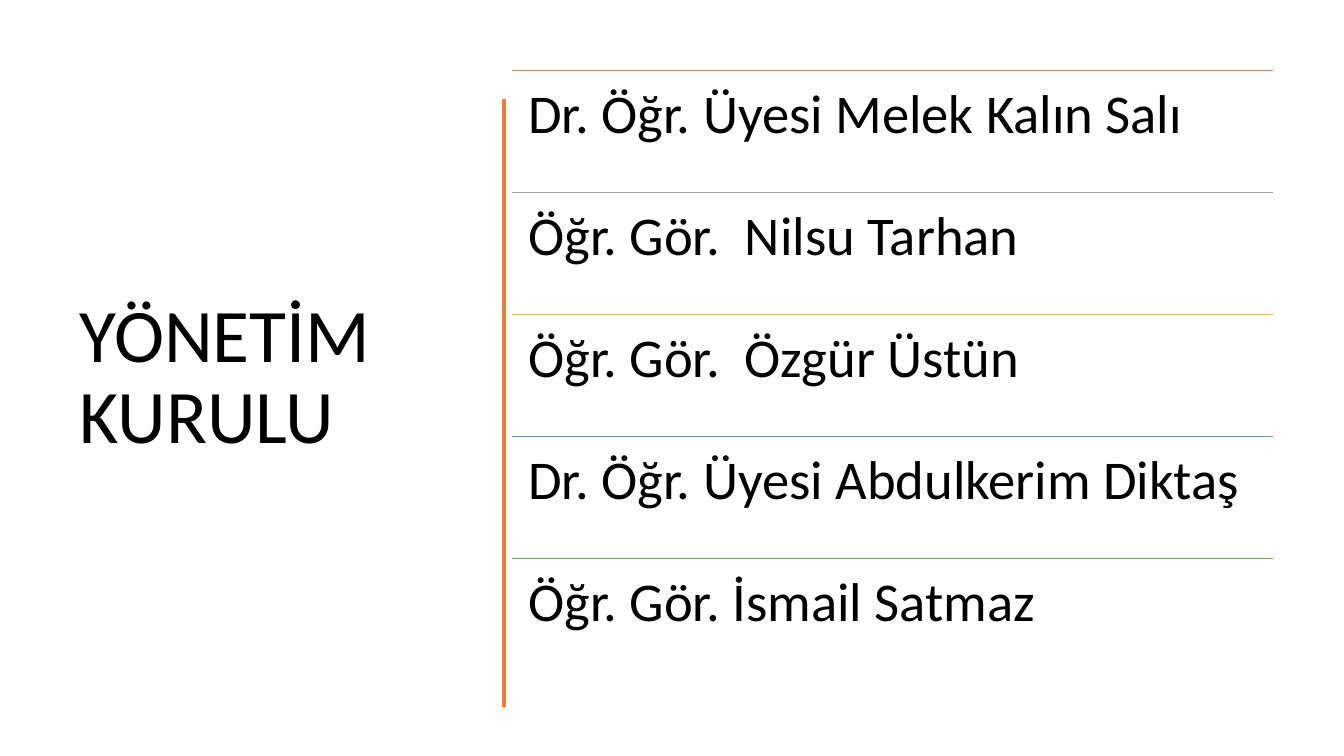
from dataclasses import dataclass

from pptx import Presentation
from pptx import util as u
from pptx.dml.color import RGBColor
from pptx.enum import shapes, text
from pptx.oxml.ns import qn
from lxml import etree


@dataclass(frozen=True)
class Theme:
    font: str = "Calibri"
    ink: str = "000000"
    brush: str = "ED7D31"
    rules: tuple = ("ED7D31", "A5A5A5", "FFC000", "5B9BD5", "70AD47")
    title_size: float = 54
    name_size: float = 39
    brush_width: float = 3.25
    rule_width: float = 1


THEME = Theme()
WIDTH, HEIGHT = 13.33, 7.5
TITLE_BOX = (0.69, 0.7, 3.74, 6.11)
BRUSH_BOX = (4.72, 0.84, 0.04, 5.92)
LIST_BOX = (5.08, 0.7, 7.55, 6.05)
NAME_INSET = 0.16

BOARD = (
    "Dr. Öğr. Üyesi Melek Kalın Salı",
    "Öğr. Gör.  Nilsu Tarhan",
    "Öğr. Gör.  Özgür Üstün",
    "Dr. Öğr. Üyesi Abdulkerim Diktaş",
    "Öğr. Gör. İsmail Satmaz",
)
BRUSH_LEFT = (0.25, 0.3, 0.3, 0, 0.3, 0.25, 0.2, 0.25, 0.2,
              0.1, 0.3, 0.25, 0.3, 0.1, 0.25, 0.25, 0.05, 0.25)
BRUSH_RIGHT = (0.75, 1, 0.7, 0.65, 0.9, 0.75, 0.75, 0.9, 0.85,
               0.8, 1, 0.65, 0.75, 0.95, 1, 0.7, 0.75, 0.75)


def rgb(value):
    return RGBColor.from_string(value)


def write(tf, words, size, anchor):
    tf.text = words
    tf.word_wrap = True
    tf.auto_size = text.MSO_AUTO_SIZE.NONE
    tf.vertical_anchor = anchor
    p = tf.paragraphs[0]
    p.alignment = text.PP_ALIGN.LEFT
    p.line_spacing = 0.9
    font = p.runs[0].font
    font.name = THEME.font
    font.size = u.Pt(size)
    font.color.rgb = rgb(THEME.ink)


def add_title(s, box, words):
    sp = s.shapes.title
    sp.left, sp.top, sp.width, sp.height = map(u.Inches, box)
    write(sp.text_frame, words, THEME.title_size, text.MSO_ANCHOR.MIDDLE)


def add_brush_stroke(s, box):
    left, top, width, height = box
    step = height / (len(BRUSH_LEFT) - 1)

    def edge(shares):
        return [(left + width * share, top + step * i)
                for i, share in enumerate(shares)]

    start, *rest = edge(BRUSH_LEFT) + edge(BRUSH_RIGHT)[::-1]
    builder = s.shapes.build_freeform(*start, scale=u.Inches(1))
    builder.add_line_segments(rest, close=True)
    sp = builder.convert_to_shape()
    sp.shadow.inherit = False
    sp.fill.solid()
    sp.fill.fore_color.rgb = rgb(THEME.brush)
    sp.line.color.rgb = rgb(THEME.brush)
    sp.line.width = u.Pt(THEME.brush_width)
    ln = sp.line.fill._xPr
    ln.set("cap", "rnd")
    etree.SubElement(ln, qn("a:round"))


def add_rule(s, left, top, width, color):
    x1, x2, y = map(u.Inches, (left, left + width, top))
    line = s.shapes.add_connector(shapes.MSO_CONNECTOR.STRAIGHT, x1, y, x2, y)
    line.line.color.rgb = rgb(color)
    line.line.width = u.Pt(THEME.rule_width)
    etree.SubElement(line._element.spPr, qn("a:effectLst"))


def add_board(s, box, names):
    left, top, width, height = box
    row = height / len(names)
    for i, (name, color) in enumerate(zip(names, THEME.rules)):
        y = top + i * row
        add_rule(s, left, y, width, color)
        sp = s.shapes.add_textbox(*map(u.Inches, (left, y, width, row)))
        tf = sp.text_frame
        tf.margin_left = tf.margin_right = u.Inches(NAME_INSET)
        tf.margin_top = tf.margin_bottom = u.Inches(NAME_INSET)
        write(tf, name, THEME.name_size, text.MSO_ANCHOR.TOP)


def main():
    prs = Presentation()
    prs.slide_width, prs.slide_height = u.Inches(WIDTH), u.Inches(HEIGHT)
    s = prs.slides.add_slide(prs.slide_layouts.get_by_name("Title Only"))
    add_title(s, TITLE_BOX, "YÖNETİM KURULU")
    add_brush_stroke(s, BRUSH_BOX)
    add_board(s, LIST_BOX, BOARD)
    prs.save("out.pptx")


if __name__ == "__main__":
    main()
